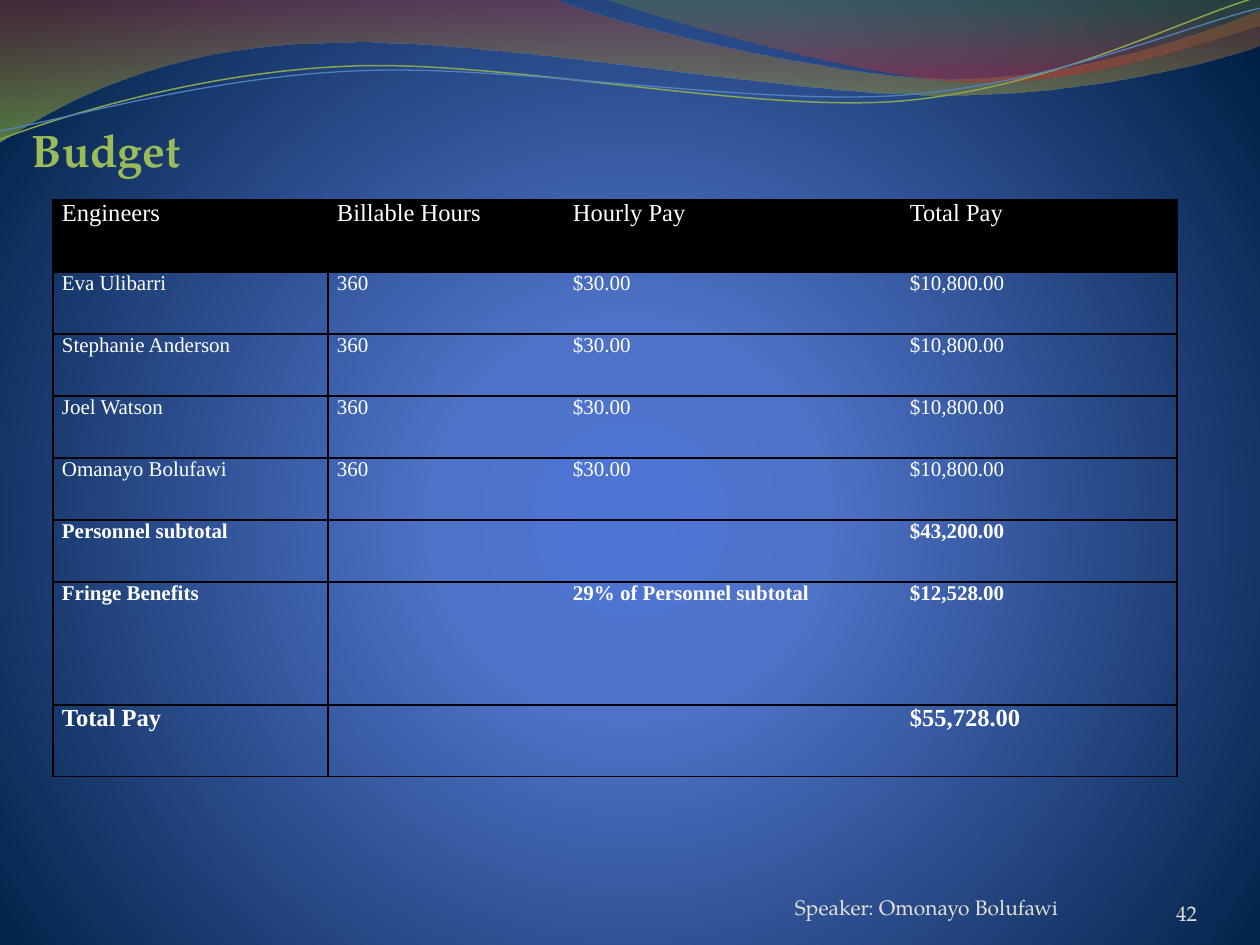
"""Build the budget slide with its wave header and pay table."""
from lxml.etree import SubElement
from pptx import Presentation
from pptx.dml.color import RGBColor as RGB
from pptx.enum.text import MSO_ANCHOR as ANCHOR, PP_ALIGN as ALIGN
from pptx.oxml import parse_xml
from pptx.oxml.ns import nsdecls, qn
from pptx.util import Pt

SCALE = 914400 / 126
COLORS = {
    "black": "000000", "white": "FFFFFF", "title": "9BBB59", "footer": "E3E1D7",
    "center": "4D75D6", "middle": "4E72C7", "edge": "001F44",
    "red": "973330", "lime": "95C238", "olive": "769537", "crimson": "BE3330",
    "green line": "89A54F", "blue line": "4F81BD",
}


def emu(px):
    return round(px * SCALE)


def set_gradient(fill, element, stops, direction):
    fill.gradient()
    gradient = element.find(".//" + qn("a:gradFill"))
    stop_xml = "".join(
        f'<a:gs pos="{position * 1000}"><a:srgbClr val="{COLORS[color]}">'
        f'<a:alpha val="{alpha * 1000}"/></a:srgbClr></a:gs>'
        for position, color, alpha in stops)
    gradient.getparent().replace(gradient, parse_xml(
        f'<a:gradFill {nsdecls("a")} rotWithShape="1">'
        f'<a:gsLst>{stop_xml}</a:gsLst>{direction}</a:gradFill>'))


presentation = Presentation()
presentation.slide_width, presentation.slide_height = emu(1260), emu(945)
slide = presentation.slides.add_slide(presentation.slide_layouts[6])
set_gradient(
    slide.background.fill, slide.element,
    [(0, "center", 100), (25, "middle", 100), (100, "edge", 100)],
    '<a:path path="circle"><a:fillToRect l="10000" t="110000" r="10000" b="100000"/></a:path>')

waves = [
    ([(0, 0), (554, -1), (600, 21, 837, 79, 955, 79), (1075, 79, 1207, 33, 1260, 11),
      (1261, 45), (1239, 55, 1096, 96, 940, 95), (784, 95, 481, 35, 324, 43),
      (163, 45, 58, 105, -1, 142)], [(0, "red", 45), (100, "lime", 55)], None),
    ([(604, -1), (641, 14, 859, 78, 969, 82), (1079, 87, 1211, 40, 1260, 26), (1260, 0)],
     [(0, "olive", 30), (80, "crimson", 45)], None),
    ([(-3, 110), (58, 90, 200, 52, 349, 53), (499, 53, 745, 118, 896, 114),
      (1049, 109, 1184, 45, 1260, 27)], None, ("green line", 0.85)),
    ([(-2, 101), (57, 94, 207, 57, 357, 58), (509, 58, 750, 112, 902, 108),
      (1052, 104, 1187, 52, 1262, 38)], None, ("blue line", 0.75)),
]
for segments, stops, line in waves:
    points = [(emu(segment[i]), emu(segment[i + 1]))
              for segment in segments for i in range(0, len(segment), 2)]
    builder = slide.shapes.build_freeform(*points[0], scale=1.0)
    builder.add_line_segments(points[1:], close=stops is not None)
    shape = builder.convert_to_shape()
    shape.shadow.inherit = False
    straight = iter(shape.element.findall(".//" + qn("a:lnTo")))
    for segment in segments[1:]:
        first = next(straight)
        if len(segment) == 6:
            first.tag = qn("a:cubicBezTo")
            for _ in range(2):
                extra = next(straight)
                first.append(extra[0])
                extra.getparent().remove(extra)
    if stops:
        set_gradient(shape.fill, shape.element, stops, '<a:lin ang="5400000" scaled="0"/>')
        shape.line.fill.background()
    else:
        shape.rotation = -2.7
        shape.fill.background()
        shape.line.color.rgb = RGB.from_string(COLORS[line[0]])
        shape.line.width = Pt(line[1])

labels = [
    ("Budget", (32, 116, 1197, 798), (0, 6, 3, 6), 26, "title", True, ANCHOR.TOP, ALIGN.LEFT, 5),
    ("Speaker: Omonayo Bolufawi", (795, 895, 462, 50), (0, 0, 0, 25), 12, "footer", False,
     ANCHOR.BOTTOM, ALIGN.LEFT, 0),
    ("42", (1092, 876, 105, 50), (0, 0, 0, 0), 12, "footer", False,
     ANCHOR.BOTTOM, ALIGN.RIGHT, 0),
]
for text, box, insets, size, color, bold, anchor, alignment, space in labels:
    text_frame = slide.shapes.add_textbox(*map(emu, box)).text_frame
    text_frame.word_wrap = True
    text_frame.vertical_anchor = anchor
    (text_frame.margin_left, text_frame.margin_top,
     text_frame.margin_right, text_frame.margin_bottom) = map(emu, insets)
    text_frame.text = text
    paragraph = text_frame.paragraphs[0]
    paragraph.alignment = alignment
    paragraph.space_before = Pt(space)
    font = paragraph.runs[0].font
    font.name, font.size, font.bold = "TeX Gyre Pagella", Pt(size), bold
    font.color.rgb = RGB.from_string(COLORS[color])

engineers = ["Eva Ulibarri", "Stephanie Anderson", "Joel Watson", "Omanayo Bolufawi"]
rows = [
    ["Engineers", "Billable Hours", "Hourly Pay", "Total Pay"],
    *[[name, "360", "$30.00", "$10,800.00"] for name in engineers],
    ["Personnel subtotal", "", "", "$43,200.00"],
    ["Fringe Benefits", "", "29% of Personnel subtotal", "$12,528.00"],
    ["Total Pay", "", "", "$55,728.00"],
]
widths = [275, 236, 337, 276]
heights = [72] + [62] * 5 + [123, 72]
table = slide.shapes.add_table(
    len(rows), len(widths), emu(53), emu(200), emu(sum(widths)), emu(sum(heights))).table
table.first_row = table.horz_banding = False
for column, width in zip(table.columns, widths):
    column.width = emu(width)
for row, height in zip(table.rows, heights):
    row.height = emu(height)

for row_index, values in enumerate(rows):
    for column_index, value in enumerate(values):
        cell = table.cell(row_index, column_index)
        cell.margin_left = cell.margin_right = emu(9)
        cell.margin_top = cell.margin_bottom = 0
        cell.text = value
        for run in cell.text_frame.paragraphs[0].runs:
            run.font.name = "Times New Roman"
            run.font.size = Pt(14 if row_index in (0, len(rows) - 1) else 12)
            run.font.bold = row_index > len(engineers)
            run.font.color.rgb = RGB.from_string(COLORS["white"])
        if row_index == 0:
            cell.fill.solid()
            cell.fill.fore_color.rgb = RGB.from_string(COLORS["black"])
        else:
            cell.fill.background()
        sides = {"lnL": column_index < 2, "lnR": column_index in (0, 3), "lnT": True, "lnB": True}
        properties = cell._tc.get_or_add_tcPr()
        for order, (side, visible) in enumerate(sides.items()):
            border = SubElement(properties, qn("a:" + side), w=str(Pt(1)))
            properties.insert(order, border)
            if visible:
                solid = SubElement(border, qn("a:solidFill"))
                SubElement(solid, qn("a:srgbClr"), val=COLORS["black"])
            else:
                SubElement(border, qn("a:noFill"))

presentation.save("out.pptx")
